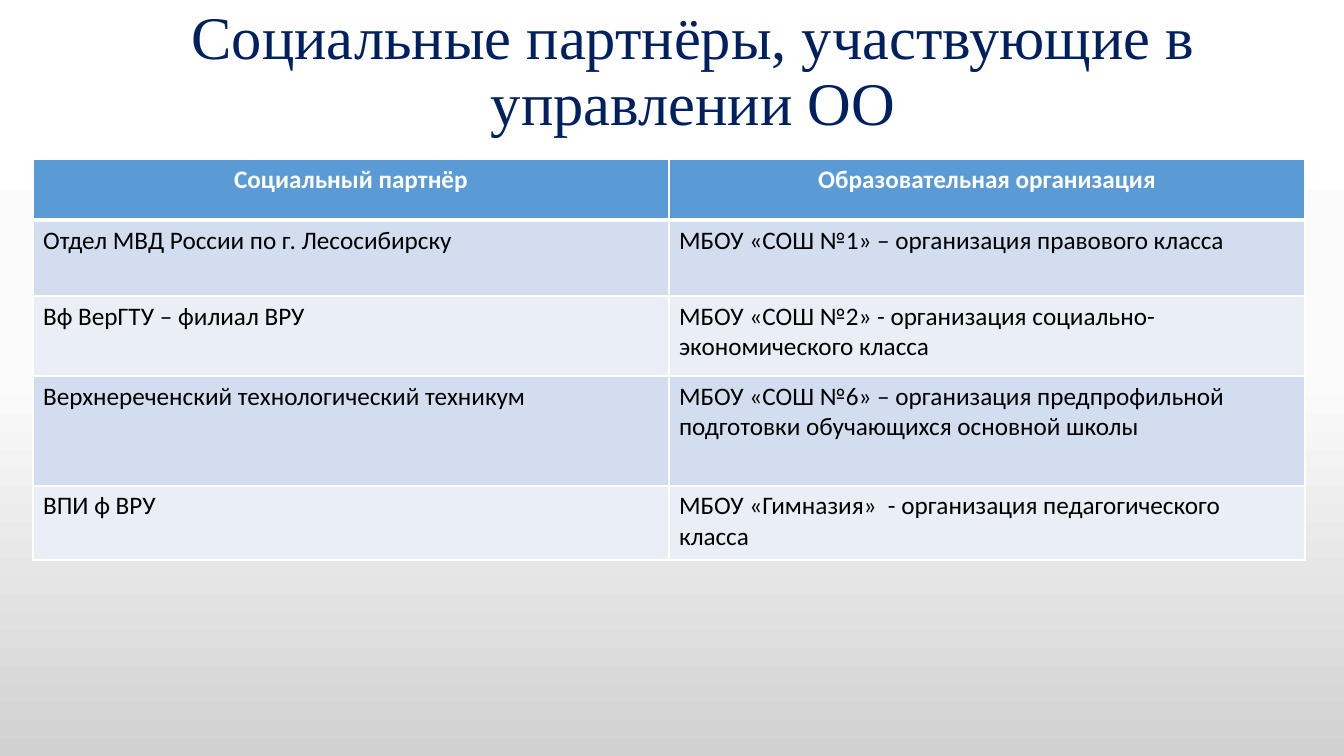
from copy import deepcopy
from pptx import Presentation
from pptx import util as u
from pptx.dml.color import RGBColor
from pptx.enum import text
from pptx.oxml import parse_xml
from pptx.oxml.ns import nsdecls, qn

TITLE = "Социальные партнёры, участвующие в управлении ОО"
ROWS = [
    ("Социальный партнёр", "Образовательная организация"),
    ("Отдел МВД России по г. Лесосибирску",
     "МБОУ «СОШ №1» – организация правового класса"),
    ("Вф ВерГТУ – филиал ВРУ",
     "МБОУ «СОШ №2» - организация социально-экономического класса"),
    ("Верхнереченский технологический техникум",
     "МБОУ «СОШ №6» – организация предпрофильной подготовки обучающихся основной школы"),
    ("ВПИ ф ВРУ",
     "МБОУ «Гимназия»  - организация педагогического класса"),
]
HEIGHTS = [61, 76, 80, 110, 74]
WIDTH = 636
STOPS = [(0, "FFFFFF"), (0.5, "FBFBFB"), (1, "D1D1D1")]
HEAD, BANDS = "5B9BD5", ("D2DEEF", "EAEFF7")


def px(n):
    return round(n * 914400 / 100.8)


def rgb(code):
    return RGBColor.from_string(code)


def style(par, face, size, color, bold=False):
    for run in par.runs:
        font = run.font
        font.name, font.size, font.bold = face, u.Pt(size), bold
        font.color.rgb = rgb(color)


def edge(cell, side, width):
    cell._tc.get_or_add_tcPr().append(parse_xml(
        f'<a:{side} {nsdecls("a")} w="{u.Pt(width)}"><a:solidFill>'
        f'<a:srgbClr val="FFFFFF"/></a:solidFill></a:{side}>'))


def backdrop(slide):
    fill = slide.background.fill
    fill.gradient()
    fill.gradient_angle = 270
    stops = slide.element.find(".//" + qn("a:gsLst"))
    stops.append(deepcopy(stops[-1]))
    for stop, (pos, color) in zip(fill.gradient_stops, STOPS):
        stop.position = pos
        stop.color.rgb = rgb(color)


def heading(slide):
    title = slide.shapes.title
    title.left, title.top, title.width, title.height = map(px, (70, 0, 1246, 146))
    frame = title.text_frame
    frame.text = TITLE
    frame.word_wrap = True
    frame.auto_size = text.MSO_AUTO_SIZE.NONE
    frame.vertical_anchor = text.MSO_ANCHOR.MIDDLE
    par = frame.paragraphs[0]
    par.alignment = text.PP_ALIGN.CENTER
    par.line_spacing = 0.9
    style(par, "Times New Roman", 43.2, "002060")


def grid(slide):
    table = slide.shapes.add_table(
        len(ROWS), 2, px(33), px(159), px(2 * WIDTH), px(sum(HEIGHTS))).table
    for col in table.columns:
        col.width = px(WIDTH)
    for r, line in enumerate(ROWS):
        table.rows[r].height = px(HEIGHTS[r])
        for c, words in enumerate(line):
            cell = table.cell(r, c)
            cell.text = words
            par = cell.text_frame.paragraphs[0]
            top = r == 0
            par.alignment = text.PP_ALIGN.CENTER if top else text.PP_ALIGN.LEFT
            style(par, "Calibri", 18, "FFFFFF" if top else "000000", top)
            for side in ("lnL", "lnR", "lnT", "lnB"):
                thick = (r, side) in ((0, "lnB"), (1, "lnT"))
                edge(cell, side, 3 if thick else 1)
            cell.fill.solid()
            cell.fill.fore_color.rgb = rgb(HEAD if top else BANDS[(r - 1) % 2])


def main():
    deck = Presentation()
    deck.slide_width, deck.slide_height = px(1344), px(756)
    slide = deck.slides.add_slide(deck.slide_layouts[5])
    backdrop(slide)
    heading(slide)
    grid(slide)
    deck.save("out.pptx")


if __name__ == "__main__":
    main()
